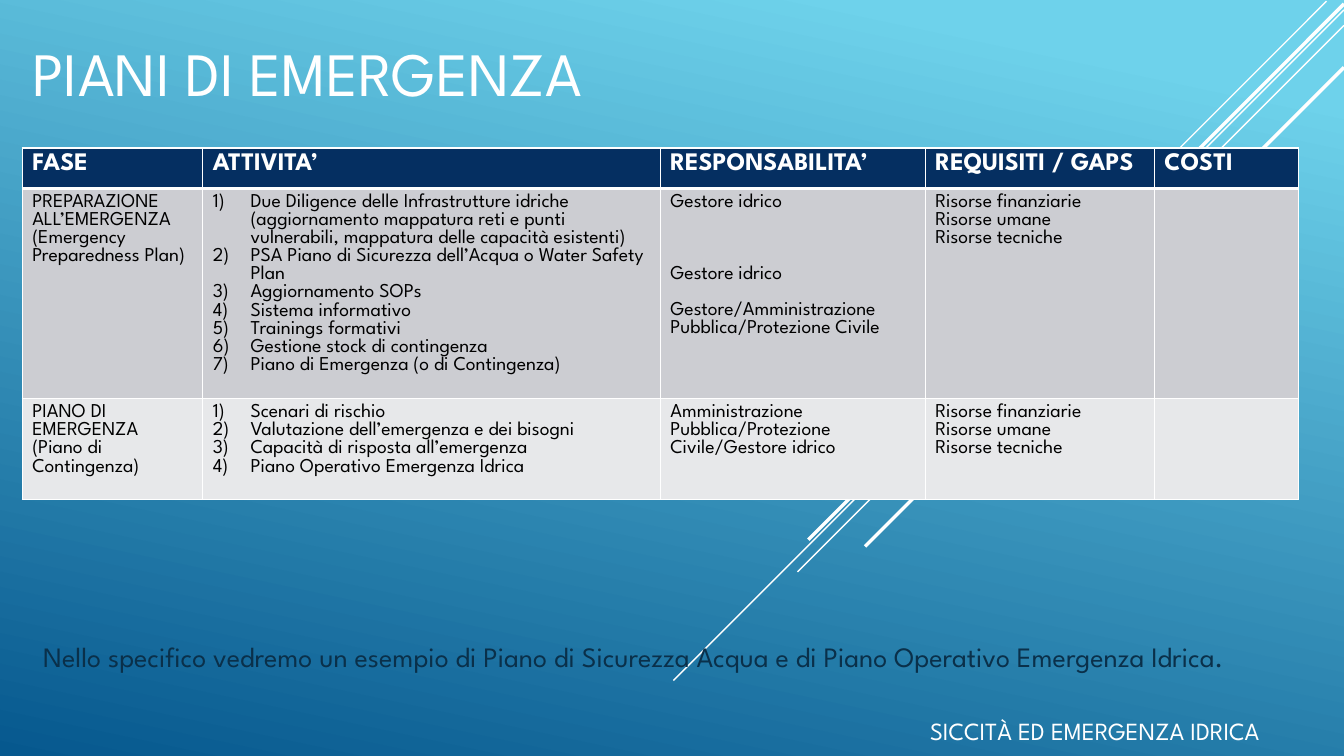
from lxml.etree import SubElement
from pptx import Presentation
from pptx.dml.color import RGBColor
from pptx.enum.shapes import MSO_CONNECTOR
from pptx.enum.text import MSO_ANCHOR, MSO_AUTO_SIZE, PP_ALIGN
from pptx.oxml.ns import qn
from pptx.util import Cm, Pt

FONT = "League Spartan"
WHITE, NAVY, BLACK, INK = "FFFFFF", "052F61", "000000", "0A304A"
WIDE, HIGH = 33.87, 19.05

# right end x, y, extent along both axes, weight
RAYS = [
    (33.43, 0.03, 10.57, 1),
    (WIDE, 0.25, 16.9, 1),
    (WIDE, 0.64, 13.77, 1),
    (WIDE, 0.1, 13.5, 2.5),
    (WIDE, 1.7, 12.07, 2.5),
]

COLS = [4.55, 11.53, 6.68, 5.77, 3.63]
ROWS = [1.02, 5.3, 2.54]
FILLS = [NAVY, "CCCDD2", "E7E8EA"]
NEEDS = ["Risorse finanziarie", "Risorse umane", "Risorse tecniche"]
LIST_COL, DUTY_COL = 1, 2
CELLS = [
    [["FASE"], ["ATTIVITA’"], ["RESPONSABILITA’"], ["REQUISITI / GAPS"], ["COSTI"]],
    [
        ["PREPARAZIONE ALL’EMERGENZA", "(Emergency Preparedness Plan)"],
        [
            "Due Diligence delle Infrastrutture idriche (aggiornamento mappatura reti "
            "e punti vulnerabili, mappatura delle capacità esistenti)",
            "PSA Piano di Sicurezza dell’Acqua o Water Safety Plan",
            "Aggiornamento SOPs",
            "Sistema informativo",
            "Trainings formativi",
            "Gestione stock di contingenza",
            "Piano di Emergenza (o di Contingenza)",
        ],
        ["Gestore idrico", "Gestore idrico",
         "Gestore/Amministrazione Pubblica/Protezione Civile"],
        NEEDS,
        [],
    ],
    [
        ["PIANO DI EMERGENZA", "(Piano di Contingenza)"],
        [
            "Scenari di rischio",
            "Valutazione dell’emergenza e dei bisogni",
            "Capacità di risposta all’emergenza",
            "Piano Operativo Emergenza Idrica",
        ],
        ["Amministrazione Pubblica/Protezione Civile/Gestore idrico"],
        NEEDS,
        [],
    ],
]
# space that lines each duty up with its activity
GAPS = [0, 38.5, 13]


def tint(code):
    return RGBColor.from_string(code)


def style(para, size, code, bold=False):
    for run in para.runs:
        font = run.font
        font.name, font.size, font.bold = FONT, Pt(size), bold
        font.color.rgb = tint(code)


def paint(slide):
    fill = slide.background.fill
    fill.gradient()
    fill.gradient_angle = 258
    stops = zip(fill.gradient_stops, [(0.1, "6ED2EB"), (1, "06588E")])
    for stop, (place, code) in stops:
        stop.position = place
        stop.color.rgb = tint(code)


def draw_rays(slide):
    for x, y, span, weight in RAYS:
        ray = slide.shapes.add_connector(
            MSO_CONNECTOR.STRAIGHT, Cm(x), Cm(y), Cm(x - span), Cm(y + span))
        ray.line.color.rgb = tint(WHITE)
        ray.line.width = Pt(weight)
        SubElement(ray._element.spPr, qn("a:effectLst"))


def add_head(slide, x, y, w, h):
    head = slide.shapes.title
    head.left, head.top, head.width, head.height = Cm(x), Cm(y), Cm(w), Cm(h)
    frame = head.text_frame
    frame.text = "PIANI DI EMERGENZA"
    frame.auto_size = MSO_AUTO_SIZE.NONE
    frame.vertical_anchor = MSO_ANCHOR.BOTTOM
    para = frame.paragraphs[0]
    para.alignment = PP_ALIGN.LEFT
    style(para, 44, WHITE)


def edge(cell, top, base):
    """Draw white cell borders, with the top and base weights in points."""
    props = cell._tc.get_or_add_tcPr()
    for side, weight in zip("LRTB", (1, 1, top, base)):
        line = SubElement(props, qn("a:ln" + side), w=str(Pt(weight)))
        fill = SubElement(line, qn("a:solidFill"))
        SubElement(fill, qn("a:srgbClr"), val=WHITE)


def count(para):
    """Number the paragraph as 1), 2), 3) with a hanging indent."""
    props = para._p.get_or_add_pPr()
    props.set("marL", str(Cm(0.95)))
    props.set("indent", str(-Cm(0.95)))
    SubElement(props, qn("a:buFont"), typeface="+mj-lt")
    SubElement(props, qn("a:buAutoNum"), type="arabicParenR")


def fill_cell(cell, row, col, lines):
    edge(cell, 3 if row == 1 else 1, 3 if row == 0 else 1)
    cell.fill.solid()
    cell.fill.fore_color.rgb = tint(FILLS[row])
    cell.text_frame.text = "\n".join(lines)
    for place, para in enumerate(cell.text_frame.paragraphs):
        if row == 0:
            style(para, 18, WHITE, True)
            continue
        style(para, 14, BLACK)
        if col == LIST_COL:
            count(para)
        elif col == DUTY_COL and place:
            para.space_before = Pt(GAPS[place])


def add_grid(slide, x, y):
    table = slide.shapes.add_table(
        len(ROWS), len(COLS), Cm(x), Cm(y), Cm(sum(COLS)), Cm(sum(ROWS))).table
    for col, width in enumerate(COLS):
        table.columns[col].width = Cm(width)
    for row, height in enumerate(ROWS):
        table.rows[row].height = Cm(height)
        for col, lines in enumerate(CELLS[row]):
            fill_cell(table.cell(row, col), row, col, lines)


def add_text(slide, x, y, w, h, text, size, code, anchor):
    frame = slide.shapes.add_textbox(Cm(x), Cm(y), Cm(w), Cm(h)).text_frame
    frame.word_wrap = True
    frame.vertical_anchor = anchor
    frame.text = text
    style(frame.paragraphs[0], size, code)
    return frame.paragraphs[0]


def main():
    deck = Presentation()
    deck.slide_width, deck.slide_height = Cm(WIDE), Cm(HIGH)
    slide = deck.slides.add_slide(deck.slide_layouts[5])
    paint(slide)
    draw_rays(slide)
    add_head(slide, 0.56, 0, 31.88, 2.87)
    add_grid(slide, 0.56, 3.73)
    add_text(slide, 23.19, 17.68, 10.67, 1.24, "SICCITÀ ED EMERGENZA IDRICA",
             17.6, WHITE, MSO_ANCHOR.BOTTOM)
    note = add_text(
        slide, 0.84, 16, 33.02, 3.05,
        "Nello specifico vedremo un esempio di Piano di Sicurezza Acqua "
        "e di Piano Operativo Emergenza Idrica.",
        20, INK, MSO_ANCHOR.TOP)
    note.space_before, note.space_after = Pt(4), Pt(6)
    deck.save("out.pptx")


if __name__ == "__main__":
    main()
